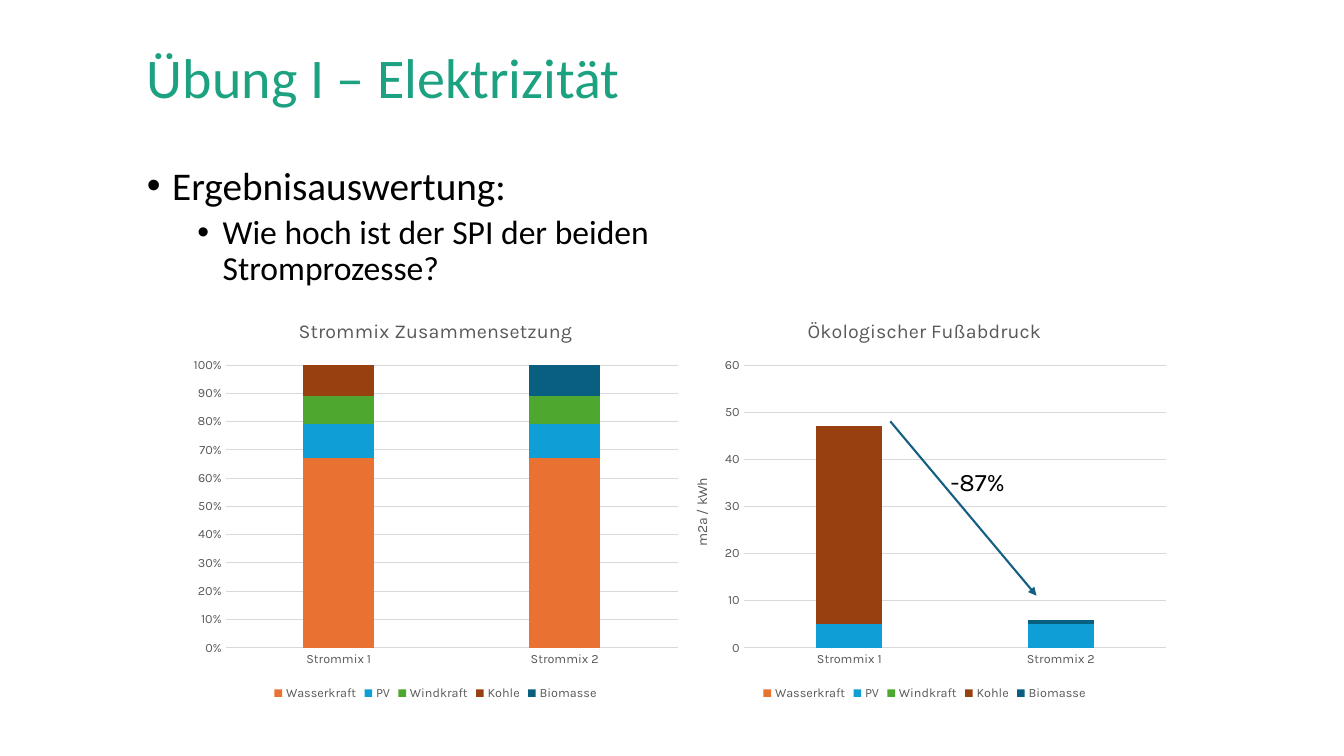
"""Builds the slide on the electricity exercise with two stacked column charts."""
from lxml import etree
from pptx import Presentation
from pptx.chart.data import CategoryChartData
from pptx.dml.color import RGBColor
from pptx.enum.chart import XL_CHART_TYPE as ChartType, XL_LEGEND_POSITION as LegendPos, XL_TICK_MARK as Tick
from pptx.enum.shapes import MSO_CONNECTOR as Connector
from pptx.enum.text import MSO_ANCHOR as Anchor
from pptx.oxml.ns import qn
from pptx.util import Inches, Pt

HEADING = "Übung I – Elektrizität"
POINTS = [
    # text, size, left indent, space before
    ("Ergebnisauswertung:", 28, 0.25, 0),
    ("Wie hoch ist der SPI der beiden Stromprozesse?", 24, 0.75, 5),
]
REDUCTION = "-87%"
MIXES = ["Strommix 1", "Strommix 2"]
SOURCES = {"Wasserkraft": "E97132", "PV": "0F9ED5", "Windkraft": "4EA72E",
           "Kohle": "994010", "Biomasse": "095F80"}
CHARTS = [
    dict(title="Strommix Zusammensetzung", left=1.82, top_value=1, step=0.1, number_format="0%", unit=None,
         values=[(0.67, 0.67), (0.12, 0.12), (0.1, 0.1), (0.11, None), (None, 0.11)]),
    dict(title="Ökologischer Fußabdruck", left=6.67, top_value=60, step=10, number_format="0", unit="m2a / kWh",
         values=[(0, 0), (5, 5), (0, 0), (42, None), (None, 1)]),
]
GREEN, BLACK, GREY, GRID, ARROW = "1DA281", "000000", "595959", "D9D9D9", "156082"


def rgb(color):
    return RGBColor.from_string(color)


def style(font, name, size, color):
    font.name, font.size, font.bold = name, Pt(size), False
    font.color.rgb = rgb(color)


def add_box(slide, left, top, width, height, wrap=True):
    frame = slide.shapes.add_textbox(Inches(left), Inches(top), Inches(width), Inches(height)).text_frame
    frame.word_wrap = wrap
    return frame


def add_run(paragraph, text, name, size, color):
    run = paragraph.add_run()
    run.text = text
    style(run.font, name, size, color)


def add_points(frame):
    for number, (text, size, indent, before) in enumerate(POINTS):
        point = frame.add_paragraph() if number else frame.paragraphs[0]
        properties = point._p.get_or_add_pPr()
        properties.set("marL", str(Inches(indent)))
        properties.set("indent", str(Inches(-0.25)))
        etree.SubElement(properties, qn("a:buFont")).set("typeface", "Arial")
        etree.SubElement(properties, qn("a:buChar")).set("char", "•")
        point.level = number
        point.line_spacing = 0.9
        point.space_before = Pt(before)
        add_run(point, text, "Calibri", size, BLACK)


def set_line(line, color):
    line.color.rgb = rgb(color)
    line.width = Pt(0.75)


def add_mix_chart(slide, title, left, top_value, step, number_format, unit, values):
    data = CategoryChartData(number_format=number_format)
    data.categories = MIXES
    for source, amounts in zip(SOURCES, values):
        data.add_series(source, amounts)
    chart = slide.shapes.add_chart(ChartType.COLUMN_STACKED, Inches(left), Inches(2.99),
                                   Inches(5), Inches(4), data).chart
    style(chart.font, "Karla", 10, BLACK)
    chart.has_title = True
    add_run(chart.chart_title.text_frame.paragraphs[0], title, "Karla", 14, GREY)
    chart.chart_title.include_in_layout = False
    chart.has_legend = True
    chart.legend.position = LegendPos.BOTTOM
    chart.legend.include_in_layout = False
    style(chart.legend.font, "Karla", 9, GREY)

    columns = chart.plots[0]
    columns.gap_width, columns.overlap, columns.vary_by_categories = 219, 100, False
    for series, color in zip(columns.series, SOURCES.values()):
        series.format.fill.solid()
        series.format.fill.fore_color.rgb = rgb(color)

    mixes, scale = chart.category_axis, chart.value_axis
    for axis in (mixes, scale):
        axis.major_tick_mark = axis.minor_tick_mark = Tick.NONE
        style(axis.tick_labels.font, "Karla", 9, GREY)
    set_line(mixes.format.line, GRID)
    scale.format.line.fill.background()
    scale.has_major_gridlines = True
    set_line(scale.major_gridlines.format.line, GRID)
    scale.minimum_scale, scale.maximum_scale, scale.major_unit = 0, top_value, step
    scale.tick_labels.number_format = number_format
    scale.tick_labels.number_format_is_linked = False
    if unit:
        add_run(scale.axis_title.text_frame.paragraphs[0], unit, "Karla", 10, GREY)


def add_arrow(slide, start, end):
    arrow = slide.shapes.add_connector(Connector.STRAIGHT, *map(Inches, start + end))
    arrow.line.color.rgb = rgb(ARROW)
    arrow.line.width = Pt(1.5)
    etree.SubElement(arrow.line._get_or_add_ln(), qn("a:tailEnd")).set("type", "triangle")
    etree.SubElement(arrow._element.spPr, qn("a:effectLst"))


def main():
    deck = Presentation()
    deck.slide_width, deck.slide_height = Inches(13.33), Inches(7.5)
    slide = deck.slides.add_slide(deck.slide_layouts[6])

    heading = add_box(slide, 1.36, 0.46, 8.17, 0.68)
    heading.vertical_anchor = Anchor.MIDDLE
    heading.paragraphs[0].line_spacing = 0.9
    add_run(heading.paragraphs[0], HEADING, "Calibri", 40, GREEN)

    add_points(add_box(slide, 1.36, 1.6, 7.17, 5.16))
    for chart in CHARTS:
        add_mix_chart(slide, **chart)
    add_arrow(slide, (8.83, 4.18), (10.28, 5.91))
    reduction = add_box(slide, 9.33, 4.58, 0.77, 0.4, wrap=False)
    add_run(reduction.paragraphs[0], REDUCTION, "Karla", 18, BLACK)

    deck.save("out.pptx")


if __name__ == "__main__":
    main()
